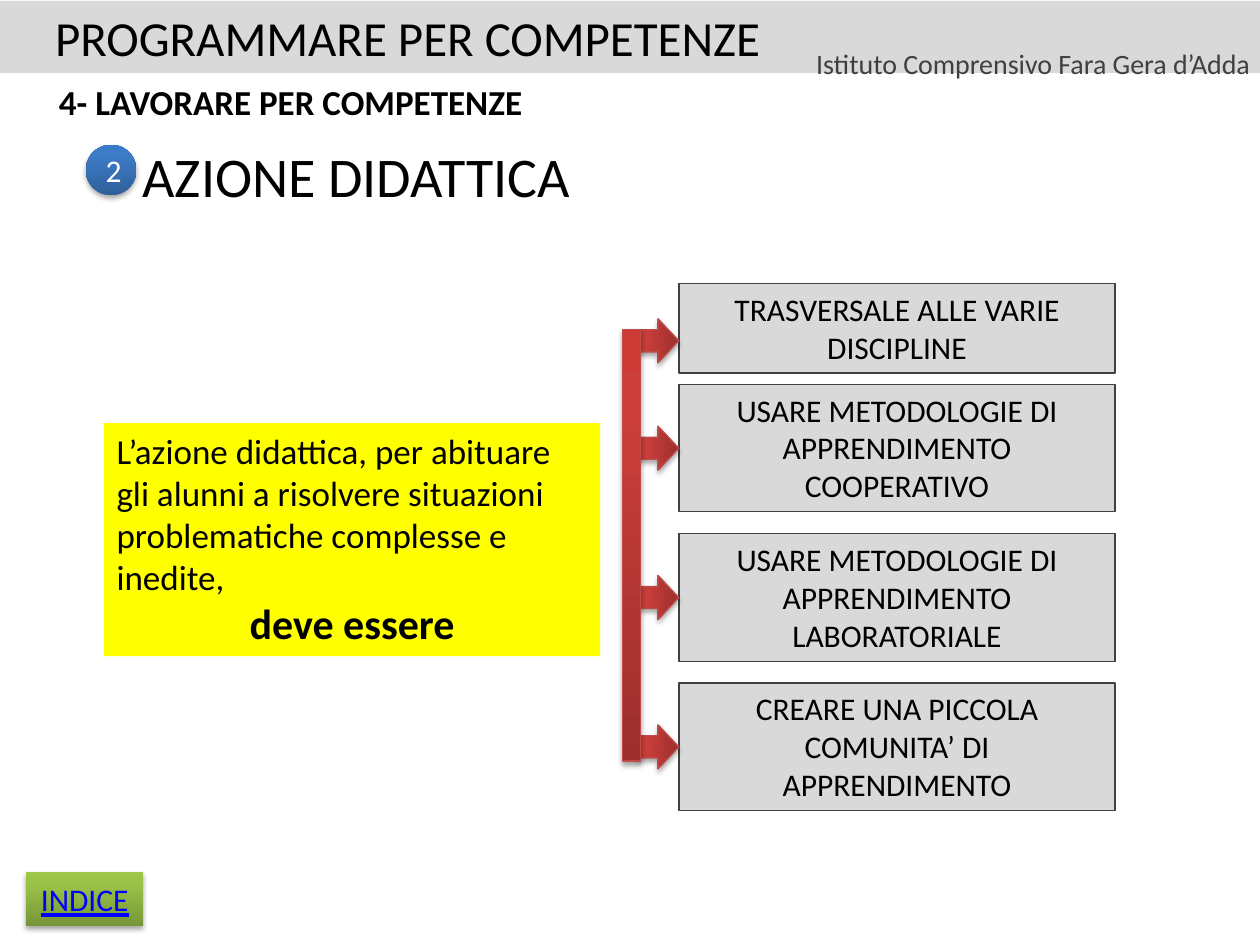
"""Build the slide on teaching by competences: AZIONE DIDATTICA."""
from copy import deepcopy

from lxml.etree import SubElement
from pptx import Presentation
from pptx.dml.color import RGBColor
from pptx.enum.shapes import MSO_SHAPE as Shape
from pptx.enum.text import MSO_ANCHOR as Anchor, MSO_AUTO_SIZE as AutoSize, PP_ALIGN as Align
from pptx.oxml.ns import qn
from pptx.util import Cm, Pt

BLACK = RGBColor(0x00, 0x00, 0x00)
WHITE = RGBColor(0xFF, 0xFF, 0xFF)
YELLOW = RGBColor(0xFF, 0xFF, 0x00)
LIGHT_GREY = RGBColor(0xD9, 0xD9, 0xD9)
DARK_GREY = RGBColor(0x40, 0x40, 0x40)
LINK_BLUE = RGBColor(0x00, 0x00, 0xFF)
RED_LINE = RGBColor(0xBF, 0x4C, 0x48)
RED = [RGBColor(0x9C, 0x2F, 0x2D), RGBColor(0xCB, 0x3E, 0x3A), RGBColor(0xCE, 0x3B, 0x37)]
BLUE = [RGBColor(0x2F, 0x5F, 0x99), RGBColor(0x3D, 0x7C, 0xC7), RGBColor(0x3A, 0x7C, 0xCB)]
GREEN = [RGBColor(0x77, 0x97, 0x37), RGBColor(0x9B, 0xC3, 0x48), RGBColor(0x9D, 0xC7, 0x46)]
STOPS = [0, 0.8, 1]

TITLE = "AZIONE DIDATTICA"
HEADING = "PROGRAMMARE PER COMPETENZE"
SCHOOL = "Istituto Comprensivo Fara Gera d’Adda"
SECTION = "4- LAVORARE PER COMPETENZE"
PREMISE = ("L’azione didattica, per abituare gli alunni a risolvere situazioni "
           "problematiche complesse e inedite,")
PREMISE_END = "deve essere"
FIRST_REQUIREMENT = "TRASVERSALE ALLE VARIE DISCIPLINE"
REQUIREMENTS = [
    "USARE METODOLOGIE DI APPRENDIMENTO COOPERATIVO",
    "USARE METODOLOGIE DI APPRENDIMENTO LABORATORIALE",
    "CREARE UNA PICCOLA COMUNITA’ DI APPRENDIMENTO",
]

BOX_LEFT, BOX_WIDTH, BOX_HEIGHT = 13.69, 8.79, 2.57
BOX_TOP, BOX_PITCH = 7.75, 3.01
FIRST_TOP, FIRST_HEIGHT, FIRST_ARROW_SHIFT = 5.72, 1.8, 0.25
ARROW_LEFT, ARROW_WIDTH, ARROW_HEIGHT = 12.82, 0.89, 0.84


def format_paragraph(paragraph, size, color=BLACK, align=Align.LEFT, bold=False, underline=False):
    paragraph.alignment = align
    for run in paragraph.runs:
        font = run.font
        font.name, font.size, font.bold, font.underline = "Calibri", Pt(size), bold, underline
        font.color.rgb = color


def write(shape, text, size, anchor=Anchor.TOP, wrap=True, **style):
    frame = shape.text_frame
    frame.text = text
    frame.word_wrap = wrap
    frame.vertical_anchor = anchor
    format_paragraph(frame.paragraphs[0], size, **style)
    return frame


def add_text(slide, place, text, size, **style):
    box = slide.shapes.add_textbox(*map(Cm, place))
    return write(box, text, size, **style)


def add_flat(slide, place, color, line=None):
    shape = slide.shapes.add_shape(Shape.RECTANGLE, *map(Cm, place))
    shape.shadow.inherit = False
    shape.fill.solid()
    shape.fill.fore_color.rgb = color
    set_line(shape, line)
    return shape


def set_line(shape, color):
    if color is None:
        shape.line.fill.background()
    else:
        shape.line.color.rgb = color
        shape.line.width = Pt(0.75)


def add_glossy(slide, kind, place, colors, line=None):
    shape = slide.shapes.add_shape(kind, *map(Cm, place))
    set_line(shape, line)
    fill = shape.fill
    fill.gradient()
    fill.gradient_angle = 90
    properties = shape._element.spPr
    stop_list = properties.find(qn("a:gradFill")).find(qn("a:gsLst"))
    stop_list.insert(1, deepcopy(stop_list[0]))
    for stop, position, color in zip(fill.gradient_stops, STOPS, colors):
        stop.position = position
        stop.color.rgb = color
    shape.shadow.inherit = False
    shadow = SubElement(properties.find(qn("a:effectLst")), qn("a:outerShdw"), blurRad=str(Pt(3.1)),
                        dist=str(Pt(1.8)), dir="5400000", rotWithShape="0")
    black = SubElement(shadow, qn("a:srgbClr"), val="000000")
    SubElement(black, qn("a:alpha"), val="35000")
    return shape


def add_requirement(slide, text, top, height, arrow_shift=0):
    box = add_flat(slide, (BOX_LEFT, top, BOX_WIDTH, height), LIGHT_GREY, DARK_GREY)
    write(box, text, 18, align=Align.CENTER).auto_size = AutoSize.SHAPE_TO_FIT_TEXT
    arrow_top = top + (height - ARROW_HEIGHT) / 2 + arrow_shift
    arrow = add_glossy(slide, Shape.DOWN_ARROW, (ARROW_LEFT, arrow_top, ARROW_WIDTH, ARROW_HEIGHT),
                       RED, RED_LINE)
    arrow.rotation = 270


def main():
    presentation = Presentation()
    presentation.slide_width, presentation.slide_height = Cm(25.4), Cm(19.05)
    slide = presentation.slides.add_slide(presentation.slide_layouts[5])

    title = slide.shapes.title
    title.left, title.top, title.width, title.height = map(Cm, (0.08, 2.72, 14.22, 1.63))
    write(title, TITLE, 32, anchor=Anchor.MIDDLE, align=Align.CENTER)

    premise = write(add_flat(slide, (2.1, 8.53, 10, 4.7), YELLOW), PREMISE, 20)
    ending = premise.add_paragraph()
    ending.text = PREMISE_END
    format_paragraph(ending, 24, align=Align.CENTER, bold=True)

    add_text(slide, (0.94, 1.5, 23.95, 1.12), SECTION, 20, bold=True)
    add_flat(slide, (0, 0.02, 25.4, 1.45), LIGHT_GREY)
    add_text(slide, (0.86, 0.02, 14.88, 1.45), HEADING, 28, wrap=False)
    school = add_text(slide, (15.85, 0.81, 9.96, 0.81), SCHOOL, 16, color=DARK_GREY, align=Align.CENTER)
    school.paragraphs[0].space_before = Pt(3.2)

    add_requirement(slide, FIRST_REQUIREMENT, FIRST_TOP, FIRST_HEIGHT, FIRST_ARROW_SHIFT)
    for index, text in enumerate(REQUIREMENTS):
        add_requirement(slide, text, BOX_TOP + index * BOX_PITCH, BOX_HEIGHT)
    add_glossy(slide, Shape.RECTANGLE, (12.55, 6.65, 0.36, 8.69), RED, RED_LINE)

    number = add_glossy(slide, Shape.OVAL, (1.73, 2.92, 1.02, 1.02), BLUE)
    write(number, "2", 18, anchor=Anchor.MIDDLE, color=WHITE, align=Align.CENTER)
    button = add_glossy(slide, Shape.RECTANGLE, (0.53, 17.58, 2.36, 1.09), GREEN)
    write(button, "INDICE", 18, anchor=Anchor.MIDDLE, color=LINK_BLUE, align=Align.CENTER, underline=True)

    presentation.save("out.pptx")


if __name__ == "__main__":
    main()
